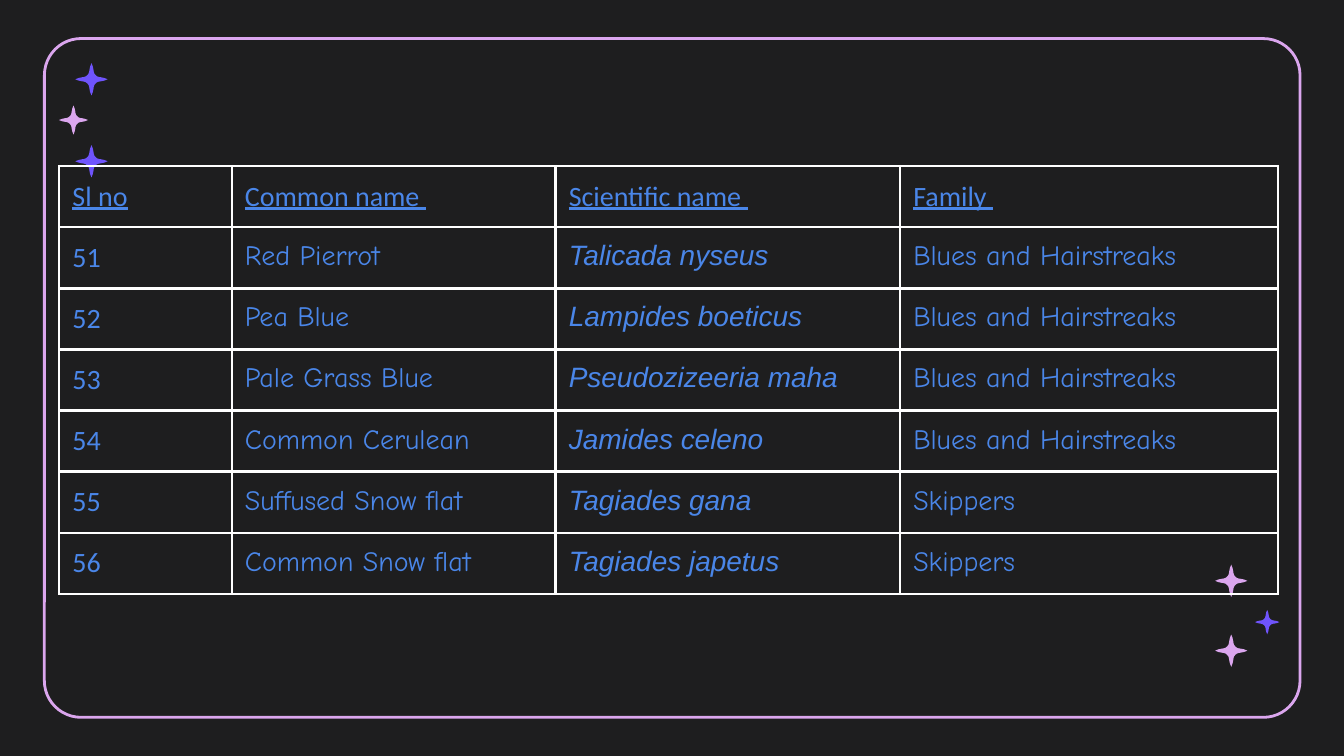
from dataclasses import dataclass
from math import cos, sin, radians
from lxml.etree import SubElement
from pptx import Presentation
from pptx.dml.color import RGBColor as Rgb
from pptx.enum.shapes import MSO_SHAPE as Kind
from pptx.oxml.ns import qn
from pptx.util import Cm, Pt


@dataclass
class Theme:
    back: str = "1E1E1F"
    pink: str = "DBA6EE"
    violet: str = "6F54FC"
    text: str = "4A86E8"
    rule: str = "FFFFFF"
    size: float = 15
    line: float = 1.5


theme = Theme()


def star(x, y, width, color):
    arc = [(70 - 55 * cos(radians(a)), 55 * sin(radians(a)) - 70) for a in range(0, 91, 15)]
    points = []
    part = [(0, -120), (10, -95), *arc, (95, -10)]
    for turn in range(4):
        points += part
        part = [(-b, a) for a, b in part]
    path = shapes.build_freeform(*points[0], scale=Cm(width) / 240)
    path.add_line_segments(points[1:], close=True)
    shape = path.convert_to_shape(Cm(x), Cm(y))
    shape.shadow.inherit = False
    shape.fill.solid()
    shape.fill.fore_color.rgb = Rgb.from_string(color)
    shape.line.fill.background()


def border(cell):
    props = cell._tc.get_or_add_tcPr()
    for side in ("lnL", "lnR", "lnT", "lnB"):
        line = SubElement(props, qn(f"a:{side}"), w=str(Pt(theme.line)))
        fill = SubElement(line, qn("a:solidFill"))
        SubElement(fill, qn("a:srgbClr"), val=theme.rule)


deck = Presentation()
deck.slide_width, deck.slide_height = Cm(25.4), Cm(14.29)
slide = deck.slides.add_slide(deck.slide_layouts[6])
slide.background.fill.solid()
slide.background.fill.fore_color.rgb = Rgb.from_string(theme.back)
shapes = slide.shapes

frame = shapes.add_shape(Kind.ROUNDED_RECTANGLE, Cm(0.84), Cm(0.73), Cm(23.73), Cm(12.83))
frame.adjustments[0] = 0.054
frame.shadow.inherit = False
frame.fill.background()
frame.line.color.rgb = Rgb.from_string(theme.pink)
frame.line.width = Pt(theme.line)

for x, y, width, color in (
    (23.27, 12.3, 0.61, theme.pink),
    (23.95, 11.76, 0.46, theme.violet),
    (23.27, 10.98, 0.61, theme.pink),
    (1.73, 1.5, 0.61, theme.violet),
    (1.39, 2.27, 0.55, theme.pink),
    (1.73, 3.05, 0.61, theme.violet),
):
    star(x, y, width, color)

blues, skips = "Blues and Hairstreaks", "Skippers"
rows = (
    ("Sl no", "Common name ", "Scientific name ", "Family "),
    ("51", "Red Pierrot", "Talicada nyseus", blues),
    ("52", "Pea Blue", "Lampides boeticus", blues),
    ("53", "Pale Grass Blue", "Pseudozizeeria maha", blues),
    ("54", "Common Cerulean", "Jamides celeno", blues),
    ("55", "Suffused Snow flat", "Tagiades gana", skips),
    ("56", "Common Snow flat", "Tagiades japetus", skips),
)
widths = (3.26, 6.12, 6.51, 7.14)
fonts = ("Calibri", "Comic Neue", "Arial", "Comic Neue")
high = 1.155

table = shapes.add_table(len(rows), len(widths), Cm(1.12), Cm(3.14),
                         Cm(sum(widths)), Cm(high * len(rows))).table
table.first_row = table.horz_banding = False
for col, width in zip(table.columns, widths):
    col.width = Cm(width)

for r, row in enumerate(rows):
    table.rows[r].height = Cm(high)
    for c, text in enumerate(row):
        cell = table.cell(r, c)
        border(cell)
        cell.fill.background()
        cell.margin_left = cell.margin_right = Cm(0.25)
        cell.margin_top = cell.margin_bottom = Cm(0.25)
        cell.text_frame.text = text
        font = cell.text_frame.paragraphs[0].runs[0].font
        font.name = fonts[c] if r else fonts[0]
        font.size = Pt(theme.size)
        font.color.rgb = Rgb.from_string(theme.text)
        font.underline = r == 0
        font.italic = r > 0 and c == 2

deck.save("out.pptx")
